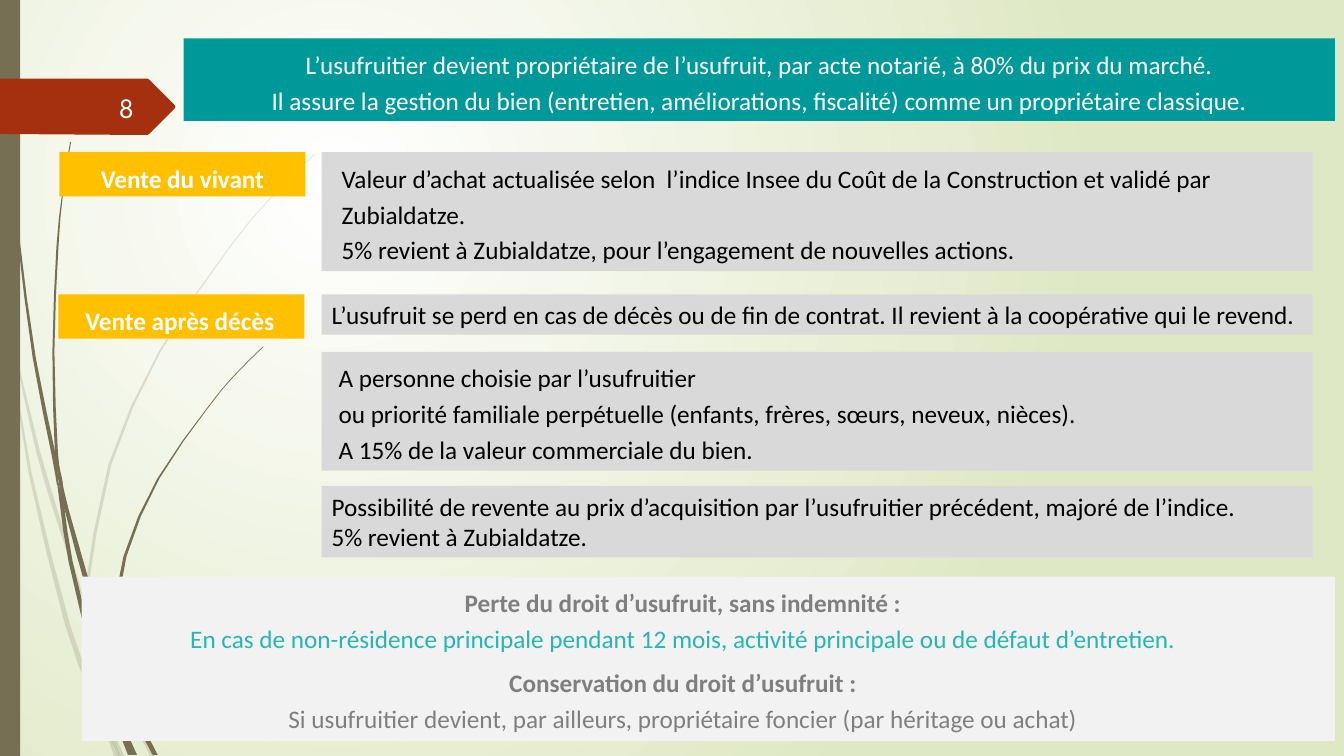
from dataclasses import dataclass

from lxml.etree import SubElement as Sub
from pptx import Presentation
from pptx.dml.color import RGBColor as Rgb
from pptx.enum.shapes import MSO_SHAPE as Kind
from pptx.enum.text import MSO_ANCHOR as Anchor, PP_ALIGN as Align
from pptx.oxml import parse_xml
from pptx.oxml.ns import nsdecls, qn
from pptx.util import Emu, Pt

PX = 9144


@dataclass(frozen=True)
class Theme:
    teal: str = "009999"
    aqua: str = "27B6B4"
    gold: str = "FFC000"
    gray: str = "D9D9D9"
    pale: str = "F2F2F2"
    dim: str = "7F7F7F"
    ink: str = "000000"
    white: str = "FFFFFF"
    snow: str = "FEFFFF"
    bark: str = "766F54"
    rust: str = "A53010"
    leaf: str = "DFE8C4"
    font: str = "Calibri"
    mark: str = "League Spartan"
    body: int = 18
    number: int = 20


T = Theme()


@dataclass(frozen=True)
class Span:
    text: str
    color: str
    bold: bool = False


@dataclass(frozen=True)
class Box:
    left: int
    top: int
    width: int
    height: int
    fill: str
    paras: list[list[Span]]
    align: Align = Align.LEFT
    line: float = 1.19
    indent: int = 0
    right: int = 10


Node = tuple[int, int, int]

FAINT: list[list[Node]] = [
    [(0, 282, 1), (7, 322, 4), (11, 350, 1)],
    [(14, 345, 1), (38, 449, 4), (60, 522, 4), (84, 599, 1)],
    [(88, 596, 1), (125, 694, 5), (152, 751, 5)],
    [(105, 711, 1), (121, 751, 5)],
    [(11, 350, 1), (30, 470, 3), (67, 620, 5), (90, 683, 5), (101, 714, 1)],
    [(312, 153, 1), (268, 197, 1), (228, 245, 1), (159, 348, 2),
     (109, 461, 3), (86, 584, 3), (87, 596, 1)],
    [(101, 714, 1), (116, 751, 5)],
    [(93, 683, 1), (103, 714, 5), (119, 751, 1)],
]
DARK: list[list[Node]] = [
    [(4, 0, 1), (7, 110, 2), (18, 233, 2), (34, 355, 3), (53, 450, 4),
     (57, 481, 1)],
    [(60, 472, 1), (66, 505, 4), (90, 591, 5), (106, 645, 1)],
    [(110, 641, 1), (134, 708, 5), (154, 749, 5)],
    [(57, 477, 1), (62, 505, 4), (70, 557, 4), (95, 658, 5), (107, 691, 6),
     (117, 722, 1)],
    [(70, 141, 1), (62, 193, 1), (57, 245, 2), (53, 349, 2), (56, 449, 3),
     (60, 472, 1)],
    [(122, 719, 1), (134, 749, 4)],
    [(55, 449, 1), (60, 477, 4), (64, 505, 1)],
    [(261, 344, 1), (231, 374, 1), (205, 406, 1), (157, 475, 2),
     (124, 552, 3), (109, 641, 4)],
    [(117, 722, 1), (129, 749, 4)],
    [(110, 691, 1), (117, 717, 5), (132, 749, 3)],
]

TAG = [(0, 78), (146, 78), (148, 79), (173, 104), (174, 106),
       (173, 108), (148, 133), (146, 134), (0, 133)]


def label(top: int, left: int, text: str, right: int = 10) -> Box:
    return Box(left, top, 244, 44, T.gold, [[Span(text, T.white, True)]],
               Align.CENTER, right=right)


def panel(top: int, height: int, text: str, line: float = 1.19,
          indent: int = 0) -> Box:
    return Box(319, top, 983, height, T.gray, [[Span(text, T.ink)]],
               line=line, indent=indent)


BOXES = [
    Box(182, 38, 1142, 82, T.teal, [[Span(
        "L’usufruitier devient propriétaire de l’usufruit, par acte notarié, "
        "à 80% du prix du marché.\n"
        "Il assure la gestion du bien (entretien, améliorations, fiscalité) "
        "comme un propriétaire classique.", T.white)]], Align.CENTER),
    Box(81, 572, 1243, 163, T.pale, [
        [Span("Perte du droit d’usufruit, sans indemnité :\n", T.dim, True),
         Span("En cas de non-résidence principale pendant 12 mois, activité "
              "principale ou de défaut d’entretien.", T.aqua)],
        [Span("Conservation du droit d’usufruit :\n", T.dim, True),
         Span("Si usufruitier devient, par ailleurs, propriétaire foncier "
              "(par héritage ou achat)", T.dim)]], Align.CENTER, right=60),
    label(151, 59, "Vente du vivant"),
    panel(151, 118, "Valeur d’achat actualisée selon  l’indice Insee du Coût "
          "de la Construction et validé par Zubialdatze.\n"
          "5% revient à Zubialdatze, pour l’engagement de nouvelles actions.",
          indent=10),
    panel(349, 118, "A personne choisie par l’usufruitier\n"
          "ou priorité familiale perpétuelle (enfants, frères, sœurs, neveux, "
          "nièces).\nA 15% de la valeur commerciale du bien.", indent=7),
    label(292, 58, "Vente après décès", right=13),
    panel(292, 40, "L’usufruit se perd en cas de décès ou de fin de contrat. "
          "Il revient à la coopérative qui le revend.", line=1),
    panel(482, 71, "Possibilité de revente au prix d’acquisition par "
          "l’usufruitier précédent, majoré de l’indice.\n"
          "5% revient à Zubialdatze.", line=1),
]


def px(n: float) -> Emu:
    return Emu(round(n * PX))


def paint(shape, color: str, alpha: int = 100) -> None:
    shape.shadow.inherit = False
    shape.fill.solid()
    shape.fill.fore_color.rgb = Rgb.from_string(color)
    shape.line.fill.background()
    if alpha < 100:
        tone = shape.fill._xPr.find(".//" + qn("a:srgbClr"))
        Sub(tone, qn("a:alpha")).set("val", str(alpha * 1000))


def write(shape, paras: list[list[Span]], *, font: str = T.font,
          size: int = T.body, align: Align = Align.LEFT, line: float = 1,
          indent: int = 0, right: int = 10,
          anchor: Anchor = Anchor.TOP) -> None:
    frame = shape.text_frame
    frame.word_wrap = True
    frame.vertical_anchor = anchor
    frame.margin_right = px(right)
    for i, spans in enumerate(paras):
        para = frame.add_paragraph() if i else frame.paragraphs[0]
        para.alignment = align
        para.line_spacing = line
        para.space_after = Pt(6)
        if indent:
            para._p.get_or_add_pPr().set("marL", str(px(indent)))
        for span in spans:
            for j, part in enumerate(span.text.split("\n")):
                if j:
                    para.add_line_break()
                if part:
                    run = para.add_run()
                    run.text = part
                    run.font.name = font
                    run.font.size = Pt(size)
                    run.font.bold = span.bold
                    run.font.color.rgb = Rgb.from_string(span.color)


def outline(slide, points: list[tuple[float, float]], color: str,
            alpha: int = 100) -> None:
    first, *rest = [(px(x), px(y)) for x, y in points]
    pen = slide.shapes.build_freeform(*first, scale=1.0)
    pen.add_line_segments(rest, close=True)
    paint(pen.convert_to_shape(), color, alpha)


def blend(a: float, b: float, c: float, d: float, t: float) -> float:
    return (2 * b + (c - a) * t + (2 * a - 5 * b + 4 * c - d) * t ** 2
            + (3 * b - a - 3 * c + d) * t ** 3) / 2


def grow(slide, stem: list[Node], alpha: int, steps: int = 2) -> None:
    nodes = [stem[0], *stem, stem[-1]]
    curve = [tuple(blend(*axis, k / steps) for axis in zip(*nodes[i:i + 4]))
             for i in range(len(nodes) - 3) for k in range(steps)]
    curve.append(stem[-1])
    near = [(x - w / 2, y) for x, y, w in curve]
    far = [(x + w / 2, y) for x, y, w in reversed(curve)]
    outline(slide, near + far, T.bark, alpha)


def rect(slide, left: int, top: int, width: int, height: int, fill: str):
    shape = slide.shapes.add_shape(Kind.RECTANGLE, px(left), px(top),
                                   px(width), px(height))
    paint(shape, fill)
    return shape


def wash(slide) -> None:
    slide.background.fill.solid()
    back = slide.background._cSld.find(".//" + qn("p:bgPr"))
    back.replace(back[0], parse_xml(
        f'<a:gradFill {nsdecls("a")} rotWithShape="1"><a:gsLst>'
        f'<a:gs pos="0"><a:srgbClr val="{T.white}"/></a:gs>'
        f'<a:gs pos="100000"><a:srgbClr val="{T.leaf}"/></a:gs></a:gsLst>'
        '<a:path path="circle"><a:fillToRect l="50000" t="50000" '
        'r="100000" b="100000"/></a:path></a:gradFill>'))


def main() -> None:
    deck = Presentation()
    deck.slide_width, deck.slide_height = px(1333), px(750)
    slide = deck.slides.add_slide(deck.slide_layouts[6])
    wash(slide)
    for stems, alpha in ((FAINT, 20), (DARK, 100)):
        for stem in stems:
            grow(slide, stem, alpha)
    rect(slide, 0, 0, 20, 750, T.bark)
    outline(slide, TAG, T.rust)
    for box in BOXES:
        shape = rect(slide, box.left, box.top, box.width, box.height, box.fill)
        write(shape, box.paras, align=box.align, line=box.line,
              indent=box.indent, right=box.right)
    page = slide.shapes.add_textbox(px(58), px(86), px(85), px(40))
    write(page, [[Span("8", T.snow)]], font=T.mark, size=T.number,
          align=Align.RIGHT, anchor=Anchor.MIDDLE)
    deck.save("out.pptx")


if __name__ == "__main__":
    main()
